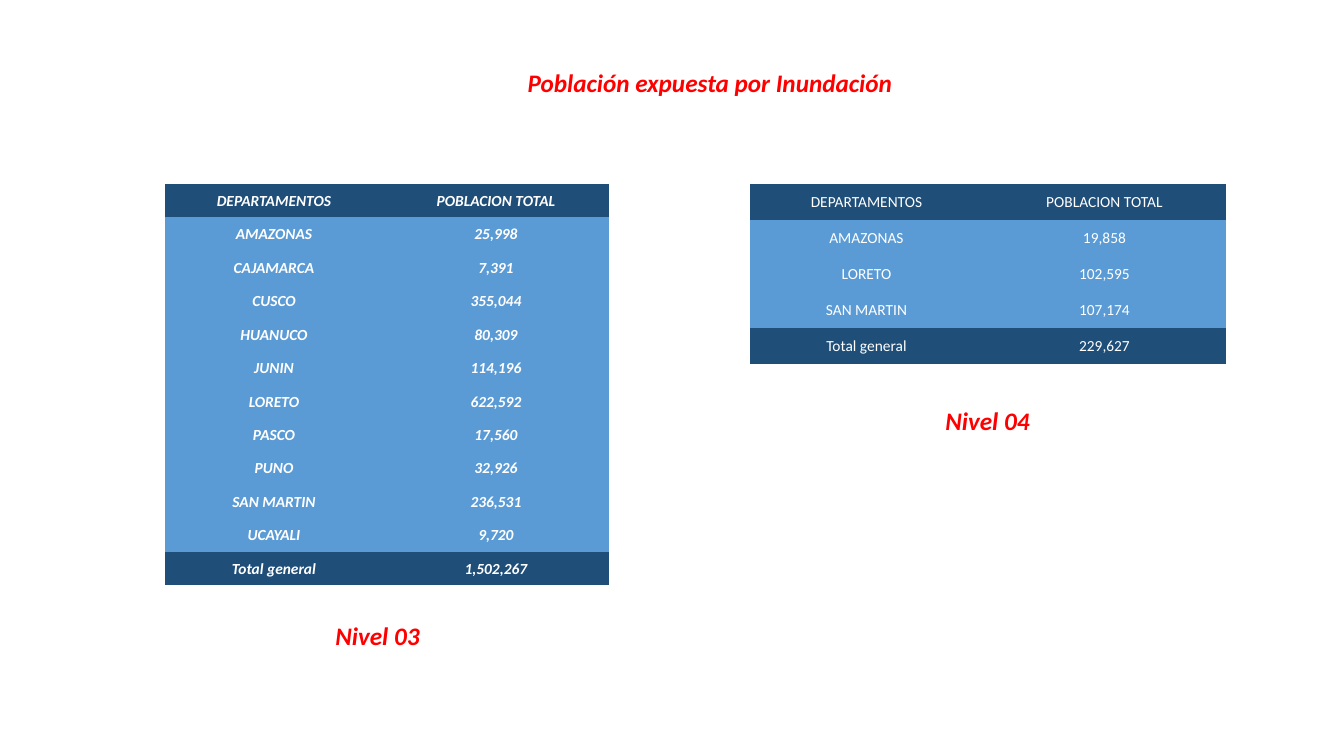
from pptx import Presentation
from pptx import util as u
from pptx.dml.color import RGBColor
from pptx.enum import text

SCALE = u.Inches(1) / 100.8
RED = RGBColor(0xFF, 0x00, 0x00)
WHITE = RGBColor(0xFF, 0xFF, 0xFF)
NAVY = RGBColor(0x1F, 0x4E, 0x79)
BLUE = RGBColor(0x5B, 0x9B, 0xD5)
PLAIN_TABLE = "{2D5ABB26-0587-4C30-8999-92F81FD0307C}"

HEADING_FONT = {"name": "Calibri", "size": u.Pt(18), "bold": True, "italic": True}
CELL_FONT = {"name": "Calibri", "size": u.Pt(11)}
LEVEL_3_FONT = {**CELL_FONT, "bold": True, "italic": True}
LEVEL_4_FONT = {**CELL_FONT, "bold": False, "italic": False}

HEADER = ("DEPARTAMENTOS", "POBLACION TOTAL")
LEVEL_3 = [
    HEADER,
    ("AMAZONAS", "25,998"),
    ("CAJAMARCA", "7,391"),
    ("CUSCO", "355,044"),
    ("HUANUCO", "80,309"),
    ("JUNIN", "114,196"),
    ("LORETO", "622,592"),
    ("PASCO", "17,560"),
    ("PUNO", "32,926"),
    ("SAN MARTIN", "236,531"),
    ("UCAYALI", "9,720"),
    ("Total general", "1,502,267"),
]
LEVEL_4 = [
    HEADER,
    ("AMAZONAS", "19,858"),
    ("LORETO", "102,595"),
    ("SAN MARTIN", "107,174"),
    ("Total general", "229,627"),
]


def px(length):
    """Turn a length in px into EMU."""
    return u.Emu(round(length * SCALE))


def apply(target, values):
    """Set each named attribute of the target."""
    for name, value in values.items():
        setattr(target, name, value)


def write(para, words, font, color):
    """Put one centred, formatted span into a paragraph."""
    para.alignment = text.PP_ALIGN.CENTER
    span = para.add_run()
    span.text = words
    apply(span.font, font)
    span.font.color.rgb = color


def heading(shape, box, words, wrap):
    """Place a red heading in its box."""
    apply(shape, dict(zip(("left", "top", "width", "height"), map(px, box))))
    frame = shape.text_frame
    apply(frame, {
        "word_wrap": wrap,
        "auto_size": text.MSO_AUTO_SIZE.SHAPE_TO_FIT_TEXT,
        "vertical_anchor": text.MSO_ANCHOR.TOP,
    })
    write(frame.paragraphs[0], words, HEADING_FONT, RED)


def level_table(page, box, first_column, rows, font):
    """Fill the box with a two-column table of departments."""
    left, top, width, height = box
    frame = page.shapes.add_table(len(rows), 2, *map(px, box))
    frame.element.xpath(".//a:tableStyleId")[0].text = PLAIN_TABLE
    table = frame.table
    apply(table, {"first_row": False, "horz_banding": False})
    for column, column_width in zip(table.columns, (first_column, width - first_column)):
        column.width = px(column_width)
    for index, values in enumerate(rows):
        table.rows[index].height = px(height / len(rows))
        fill = NAVY if index in (0, len(rows) - 1) else BLUE
        for cell, words in zip(table.rows[index].cells, values):
            apply(cell, {
                "margin_left": px(1), "margin_top": px(1),
                "margin_right": px(1), "margin_bottom": 0,
                "vertical_anchor": text.MSO_ANCHOR.MIDDLE,
            })
            cell.fill.solid()
            cell.fill.fore_color.rgb = fill
            write(cell.text_frame.paragraphs[0], words, font, WHITE)


def level_panel(page, box, first_column, rows, font, label, indent, gap):
    """Place a level's table in the box and its label below."""
    left, top, width, height = box
    level_table(page, box, first_column, rows, font)
    label_box = (left + indent, top + height + gap, 111, 40)
    shape = page.shapes.add_textbox(*map(px, label_box))
    heading(shape, label_box, label, True)


def flood_slide(deck):
    """Build the slide on population exposed to flooding."""
    page = deck.slides.add_slide(deck.slide_layouts[5])
    heading(page.shapes.title, (516, 62, 388, 40), "Población expuesta por Inundación", False)
    level_panel(page, (165, 184, 444, 401), 218, LEVEL_3, LEVEL_3_FONT, "Nivel 03", 157, 30)
    level_panel(page, (750, 184, 476, 180), 233, LEVEL_4, LEVEL_4_FONT, "Nivel 04", 182, 36)


def main():
    """Create and save the deck."""
    deck = Presentation()
    apply(deck, {"slide_width": px(1344), "slide_height": px(756)})
    flood_slide(deck)
    deck.save("out.pptx")


if __name__ == "__main__":
    main()
